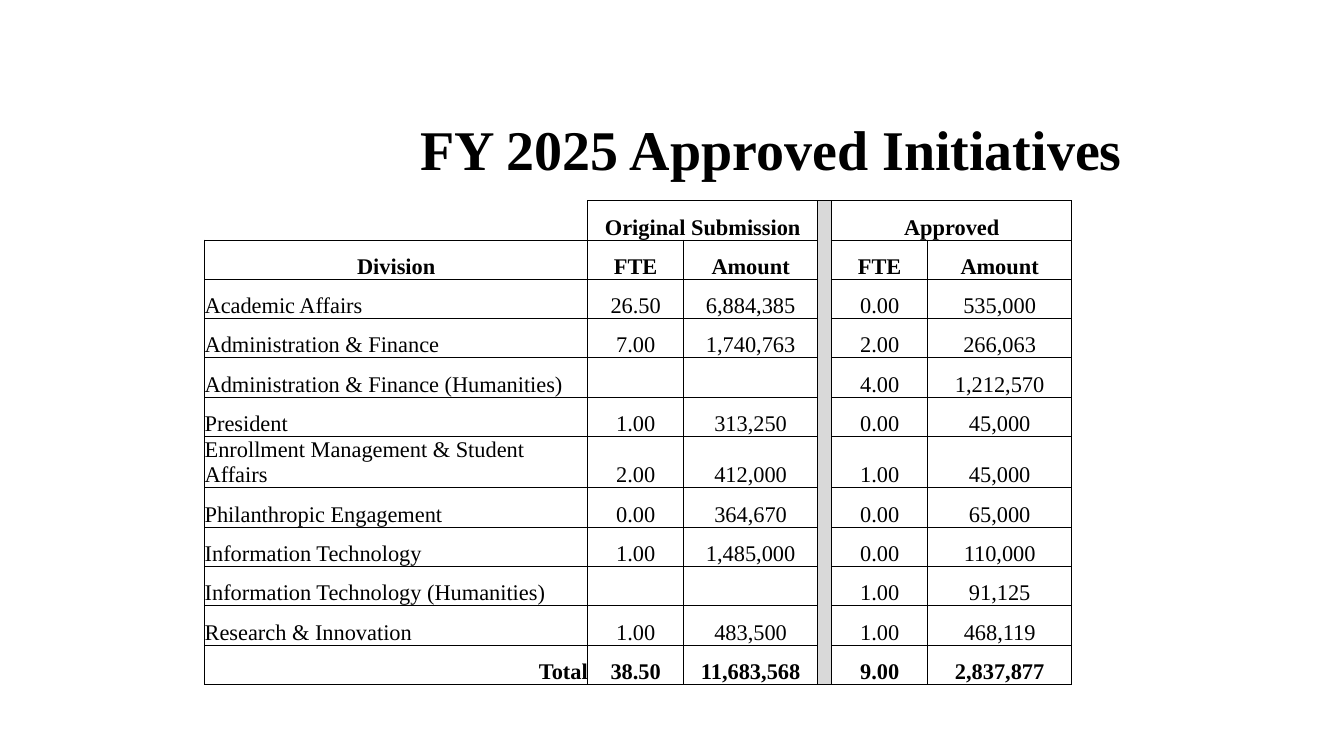
from dataclasses import dataclass

from lxml.etree import SubElement
from pptx import Presentation
from pptx.dml.color import RGBColor
from pptx.enum.text import MSO_ANCHOR as Anchor, PP_ALIGN as Align
from pptx.oxml.ns import qn
from pptx.util import Inches, Pt

FONT = "Times New Roman"
BLACK, GREY = "000000", "D9D9D9"
COLUMN_WIDTHS = [3.8, 0.95, 1.33, 0.14, 0.95, 1.43]
ROW_HEIGHT, TWO_LINE_HEIGHT = 0.39, 0.51
GAP_COLUMN = 3
THIN, THICK, NO_LINE = 0.5, 1, 0


@dataclass(frozen=True)
class Initiative:
    division: str
    submitted_fte: str
    submitted_amount: str
    approved_fte: str
    approved_amount: str
    two_lines: bool = False

    def texts(self) -> list[str]:
        return [self.division, self.submitted_fte, self.submitted_amount,
                "", self.approved_fte, self.approved_amount]


HEADINGS = [
    Initiative("", "Original Submission", "", "Approved", ""),
    Initiative("Division", "FTE", "Amount", "FTE", "Amount"),
]
INITIATIVES = [
    Initiative("Academic Affairs", "26.50", "6,884,385", "0.00", "535,000"),
    Initiative("Administration & Finance", "7.00", "1,740,763", "2.00", "266,063"),
    Initiative("Administration & Finance (Humanities)", "", "", "4.00", "1,212,570"),
    Initiative("President", "1.00", "313,250", "0.00", "45,000"),
    Initiative("Enrollment Management & Student Affairs", "2.00", "412,000",
               "1.00", "45,000", two_lines=True),
    Initiative("Philanthropic Engagement", "0.00", "364,670", "0.00", "65,000"),
    Initiative("Information Technology", "1.00", "1,485,000", "0.00", "110,000"),
    Initiative("Information Technology (Humanities)", "", "", "1.00", "91,125"),
    Initiative("Research & Innovation", "1.00", "483,500", "1.00", "468,119"),
]
TOTAL = Initiative("Total", "38.50", "11,683,568", "9.00", "2,837,877")
ROWS = [*HEADINGS, *INITIATIVES, TOTAL]
LAST_ROW = len(ROWS) - 1


def color(hex_value: str) -> RGBColor:
    return RGBColor.from_string(hex_value)


def add_text(paragraph, text: str, size: float, bold: bool) -> None:
    run = paragraph.add_run()
    run.text = text
    run.font.name = FONT
    run.font.size = Pt(size)
    run.font.bold = bold
    run.font.color.rgb = color(BLACK)


def border_widths(row: int, column: int) -> dict[str, float]:
    """Line widths in points for the left, right, top and bottom edges."""
    widths = dict.fromkeys("LRTB", THIN)
    if column == GAP_COLUMN:
        widths["T"] = THIN if row == 0 else NO_LINE
        widths["B"] = THIN if row == LAST_ROW else NO_LINE
    elif (row, column) == (0, 0):
        widths["L"] = widths["T"] = NO_LINE
    elif row == 1:
        widths["B"] = THICK
    elif row == 2:
        widths["T"] = THICK
    return widths


def draw_borders(cell, widths: dict[str, float]) -> None:
    properties = cell._tc.get_or_add_tcPr()
    for edge, width in widths.items():
        line = SubElement(properties, qn(f"a:ln{edge}"), w=str(Pt(width)))
        if width == NO_LINE:
            SubElement(line, qn("a:noFill"))
        else:
            fill = SubElement(line, qn("a:solidFill"))
            SubElement(fill, qn("a:srgbClr"), val=BLACK)


def alignment(row: int, column: int) -> Align:
    if column > 0 or row < len(HEADINGS):
        return Align.CENTER
    return Align.RIGHT if row == LAST_ROW else Align.LEFT


def draw_cell(cell, text: str, row: int, column: int) -> None:
    cell.margin_left = cell.margin_right = cell.margin_top = cell.margin_bottom = 0
    cell.vertical_anchor = Anchor.BOTTOM
    draw_borders(cell, border_widths(row, column))
    if column == GAP_COLUMN:
        cell.fill.solid()
        cell.fill.fore_color.rgb = color(GREY)
    else:
        cell.fill.background()
    paragraph = cell.text_frame.paragraphs[0]
    paragraph.alignment = alignment(row, column)
    if text:
        add_text(paragraph, text, 16, row < len(HEADINGS) or row == LAST_ROW)


def draw_title(slide) -> None:
    title = slide.shapes.title
    title.left, title.top = Inches(4.07), Inches(1.11)
    title.width, title.height = Inches(7.31), Inches(0.8)
    title.text_frame.vertical_anchor = Anchor.MIDDLE
    title.text_frame.word_wrap = True
    heading = title.text_frame.paragraphs[0]
    heading.alignment = Align.LEFT
    heading.line_spacing = 0.9
    add_text(heading, "FY 2025 Approved Initiatives", 40, True)


def draw_table(slide) -> None:
    heights = [TWO_LINE_HEIGHT if entry.two_lines else ROW_HEIGHT for entry in ROWS]
    budget = slide.shapes.add_table(
        len(ROWS), len(COLUMN_WIDTHS), Inches(2.03), Inches(1.99),
        Inches(sum(COLUMN_WIDTHS)), Inches(sum(heights))).table
    budget.first_row = budget.horz_banding = False
    for column, width in zip(budget.columns, COLUMN_WIDTHS):
        column.width = Inches(width)
    for row, height in zip(budget.rows, heights):
        row.height = Inches(height)

    # Group headings span their FTE and Amount columns
    for first in (1, GAP_COLUMN + 1):
        budget.cell(0, first).merge(budget.cell(0, first + 1))

    for row, entry in enumerate(ROWS):
        for column, text in enumerate(entry.texts()):
            draw_cell(budget.cell(row, column), text, row, column)


def main() -> None:
    deck = Presentation()
    deck.slide_width, deck.slide_height = Inches(13.33), Inches(7.5)
    slide = deck.slides.add_slide(deck.slide_layouts.get_by_name("Title Only"))
    draw_title(slide)
    draw_table(slide)
    deck.save("out.pptx")


if __name__ == "__main__":
    main()
